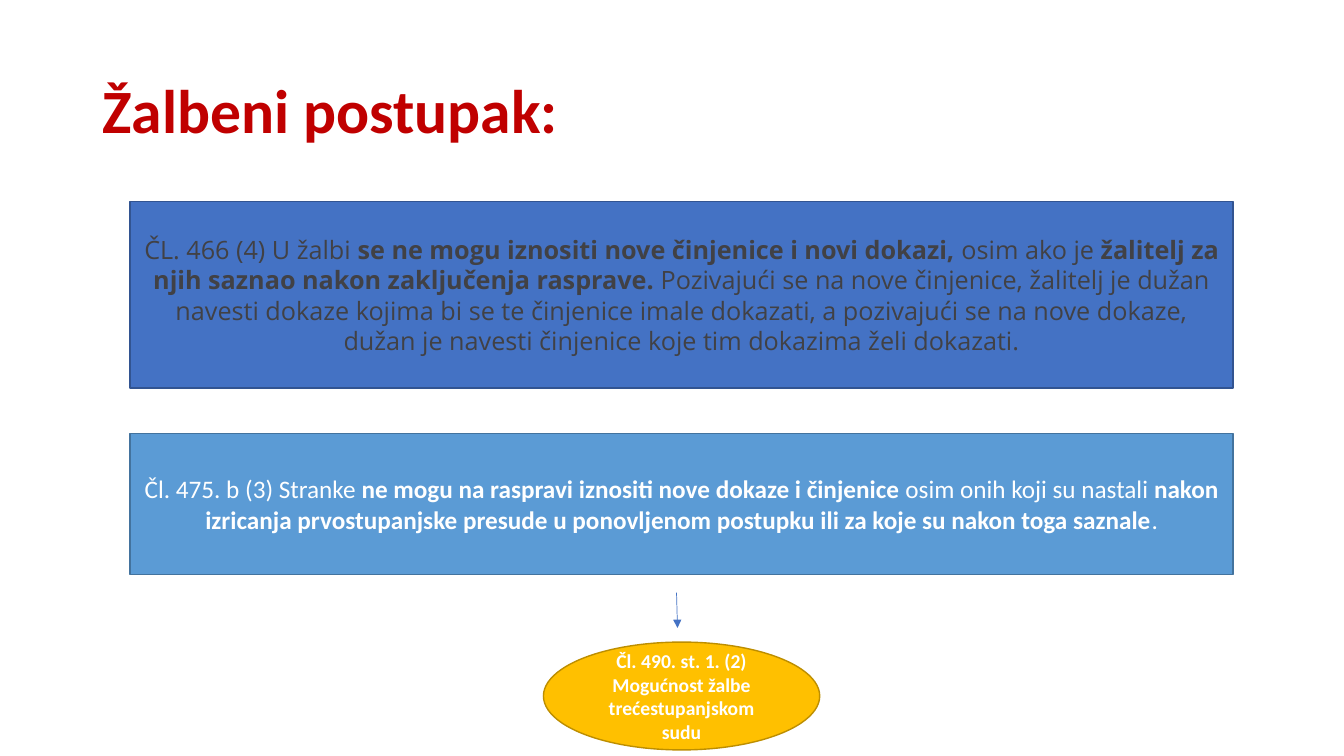
import pptx
import pptx.util
import pptx.dml.color
import pptx.enum.shapes
import pptx.enum.text
from lxml import etree

Inches = pptx.util.Inches
Pt = pptx.util.Pt
SHAPES = pptx.enum.shapes.MSO_SHAPE
MIDDLE = pptx.enum.text.MSO_ANCHOR.MIDDLE
COLORS = {
    "title": "C00000", "white": "FFFFFF", "dark": "414145",
    "blue": "4472C4", "blue edge": "325491",
    "sky": "5B9BD5", "sky edge": "43739E",
    "gold": "FFC000", "gold edge": "BD8E00",
}


def color(name):
    return pptx.dml.color.RGBColor.from_string(COLORS[name])


def write(shape, runs, font, size, ink):
    """Fill a shape with one paragraph of (text, bold) runs."""
    shape.text_frame.word_wrap = True
    shape.text_frame.vertical_anchor = MIDDLE
    paragraph = shape.text_frame.paragraphs[0]
    paragraph.font.name = font
    paragraph.font.size = Pt(size)
    paragraph.font.color.rgb = color(ink)
    for text, bold in runs:
        run = paragraph.add_run()
        run.text = text
        run.font.name = font
        run.font.size = Pt(size)
        run.font.bold = bold
        run.font.color.rgb = color(ink)
    return paragraph


presentation = pptx.Presentation()
presentation.slide_width = Inches(13.33)
presentation.slide_height = Inches(7.5)
slide = presentation.slides.add_slide(presentation.slide_layouts[6])

# Title
title = slide.shapes.add_textbox(Inches(0.92), Inches(0.4), Inches(11.5), Inches(1.45))
write(title, [("Žalbeni postupak:", True)], "Calibri", 44, "title").line_spacing = 0.9

# Articles: outline, place, fill, font, size, ink, runs
articles = [
    (SHAPES.RECTANGLE, (1.29, 2, 10.94, 1.85), "blue", "Open Sans", 18, "dark", [
        ("ČL. 466 (4) U žalbi ", False),
        ("se ne mogu iznositi nove činjenice i novi dokazi,", True),
        (" osim ako je ", False),
        ("žalitelj za njih saznao nakon zaključenja rasprave. ", True),
        ("Pozivajući se na nove činjenice, žalitelj je dužan navesti dokaze kojima "
         "bi se te činjenice imale dokazati, a pozivajući se na nove dokaze, dužan je "
         "navesti činjenice koje tim dokazima želi dokazati.", False),
    ]),
    (SHAPES.RECTANGLE, (1.29, 4.3, 10.94, 1.4), "sky", "Calibri", 18, "white", [
        ("Čl. 475. b (3) Stranke ", False),
        ("ne mogu na raspravi iznositi nove dokaze i činjenice", True),
        (" osim onih koji su nastali ", False),
        ("nakon izricanja prvostupanjske presude u ponovljenom postupku "
         "ili za koje su nakon toga saznale", True),
        (".", False),
    ]),
    (SHAPES.OVAL, (5.39, 6.37, 2.74, 1.07), "gold", "Calibri", 14, "white", [
        ("Čl. 490. st. 1. (2) Mogućnost žalbe trećestupanjskom sudu", True),
    ]),
]
for outline, place, fill, font, size, ink, runs in articles:
    article = slide.shapes.add_shape(outline, *map(Inches, place))
    article.shadow.inherit = False
    article.fill.solid()
    article.fill.fore_color.rgb = color(fill)
    article.line.color.rgb = color(fill + " edge")
    article.line.width = Pt(1)
    write(article, runs, font, size, ink).alignment = pptx.enum.text.PP_ALIGN.CENTER

# Arrow down to the third-instance appeal
arrow = slide.shapes.add_connector(
    pptx.enum.shapes.MSO_CONNECTOR.STRAIGHT,
    Inches(6.71), Inches(5.88), Inches(6.72), Inches(6.23))
arrow.line.color.rgb = color("blue")
arrow.line.width = Pt(0.5)
drawing = "{http://schemas.openxmlformats.org/drawingml/2006/main}"
etree.SubElement(arrow.line._get_or_add_ln(), drawing + "tailEnd", type="triangle")
etree.SubElement(arrow._element.spPr, drawing + "effectLst")

presentation.save("out.pptx")
